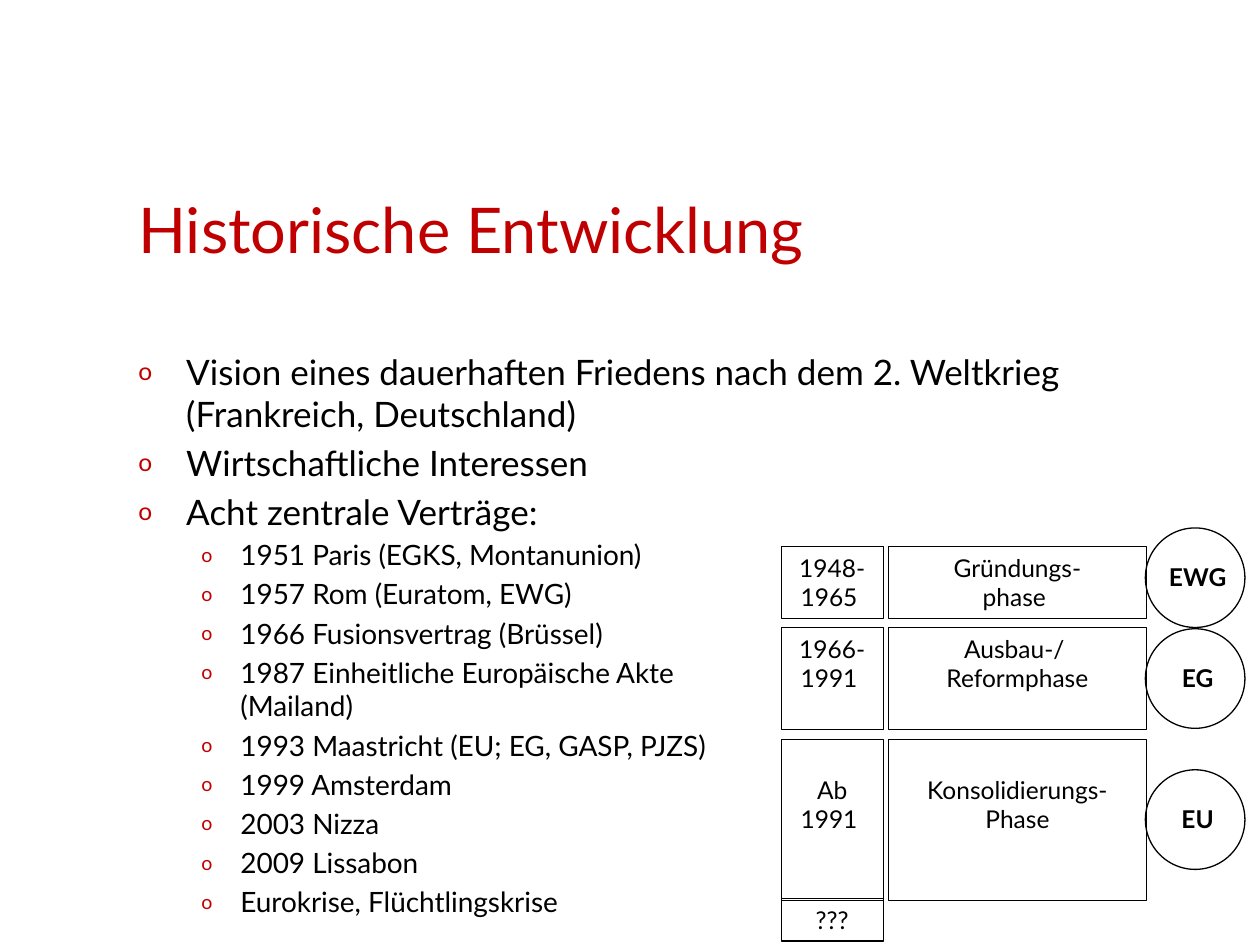
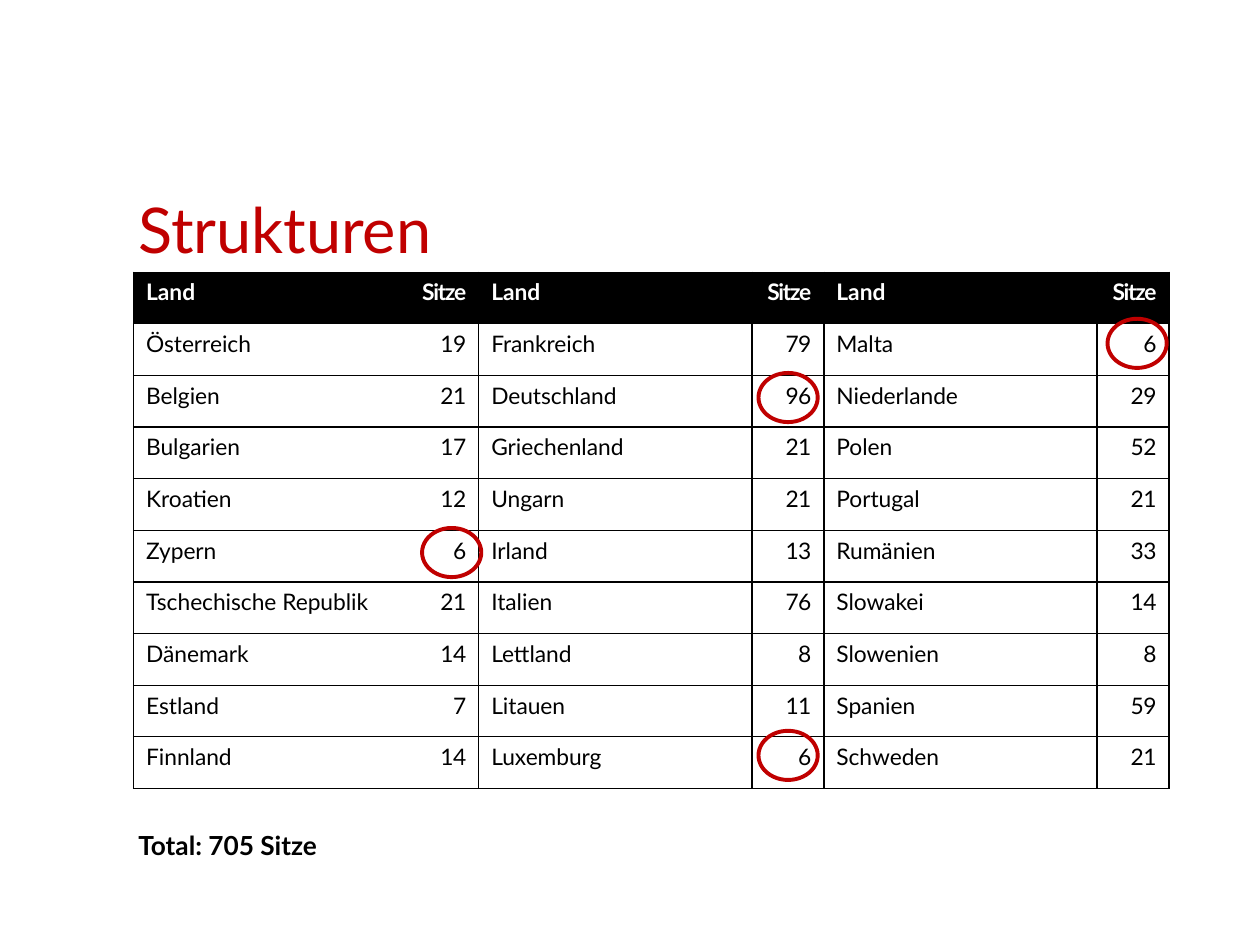
"""Build two slides on the history and the seats of the European Union."""
from lxml import etree
from pptx import Presentation
from pptx.dml.color import RGBColor
from pptx.enum.shapes import MSO_SHAPE
from pptx.enum.text import MSO_ANCHOR, PP_ALIGN
from pptx.oxml.ns import qn
from pptx.util import Inches, Pt

RED = RGBColor(0xC0, 0x00, 0x00)
BLACK = RGBColor(0x00, 0x00, 0x00)
WHITE = RGBColor(0xFF, 0xFF, 0xFF)
FONT = "Lato"
RECT, OVAL = MSO_SHAPE.RECTANGLE, MSO_SHAPE.OVAL
LEFT, MID, RIGHT, FULL = PP_ALIGN.LEFT, PP_ALIGN.CENTER, PP_ALIGN.RIGHT, PP_ALIGN.JUSTIFY
LOW, CENTRE = MSO_ANCHOR.BOTTOM, MSO_ANCHOR.MIDDLE


def write(frame, lines, size, color=BLACK, align=LEFT, bold=False):
    frame.word_wrap = True
    frame.text = "\n".join(lines)
    for para in frame.paragraphs:
        para.alignment = align
        para.font.name, para.font.size = FONT, Pt(size)
        para.font.bold, para.font.color.rgb = bold, color


def draw(slide, kind, at, color=BLACK, width=0.75):
    shape = slide.shapes.add_shape(kind, *map(Inches, at))
    shape.shadow.inherit = False
    shape.fill.background()
    shape.line.color.rgb, shape.line.width = color, Pt(width)
    shape.text_frame.vertical_anchor = MSO_ANCHOR.TOP
    return shape


prs = Presentation()
prs.slide_width, prs.slide_height = Inches(10), Inches(7.5)
slides = []
for title in ("Historische Entwicklung", "Strukturen"):
    slide = prs.slides.add_slide(prs.slide_layouts[6])
    frame = slide.shapes.add_textbox(*map(Inches, (1, 0.91, 8, 1.25))).text_frame
    frame.vertical_anchor = LOW
    write(frame, [title], 36, RED)
    slides.append(slide)
past, seats = slides

GOALS = [
    "Vision eines dauerhaften Friedens nach dem 2. Weltkrieg (Frankreich, Deutschland)",
    "Wirtschaftliche Interessen",
    "Acht zentrale Verträge:",
]
PACTS = [
    "1951 Paris (EGKS, Montanunion)",
    "1957 Rom (Euratom, EWG)",
    "1966 Fusionsvertrag (Brüssel)",
    "1987 Einheitliche Europäische Akte \v(Mailand)",
    "1993 Maastricht (EU; EG, GASP, PJZS)",
    "1999 Amsterdam",
    "2003 Nizza",
    "2009 Lissabon",
    "Eurokrise, Flüchtlingskrise",
]
frame = past.shapes.add_textbox(*map(Inches, (1, 2.73, 8, 4.01))).text_frame
write(frame, GOALS + PACTS, 20)
for i, para in enumerate(frame.paragraphs):
    sub = i >= len(GOALS)
    size = 16 if sub else 20
    props = para._p.get_or_add_pPr()
    props.set("marL", str(Inches(0.81 if sub else 0.38)))
    props.set("indent", str(-Inches(0.31 if sub else 0.38)))
    para.level = int(sub)
    para.font.size = Pt(size)
    para.space_before = Pt(0.2 * size if i else 0)
    tint = etree.Element(qn("a:buClr"))
    etree.SubElement(tint, qn("a:srgbClr"), val=str(RED))
    scale = etree.Element(qn("a:buSzPct"), val="70000")
    face = etree.Element(qn("a:buFont"), typeface=FONT)
    mark = etree.Element(qn("a:buChar"), char="o")
    spot = props.index(props.find(qn("a:spcBef"))) + 1
    for step, part in enumerate((tint, scale, face, mark)):
        props.insert(spot + step, part)

YEAR_X, PHASE_X, RING_X = 6.2, 7.05, 9.09
YEAR_W, PHASE_W, RING = 0.81, 2.05, 0.79
PHASES = [
    (4.34, 0.57, 0.05, ["1948-", "1965 "], ["Gründungs-", "phase "], "EWG", 4.19),
    (4.98, 0.81, 0.05, ["1966-", "1991 "], ["Ausbau-/ ", "Reformphase"], "EG", 4.99),
    (5.87, 1.28, 0.28, ["Ab 1991 "], ["Konsolidierungs-", "Phase"], "EU", 6.11),
]
for top, high, inset, years, phase, name, ring_y in PHASES:
    for x, wide, lines in ((PHASE_X, PHASE_W, phase), (YEAR_X, YEAR_W, years)):
        frame = draw(past, RECT, (x, top, wide, high)).text_frame
        frame.margin_top = Inches(inset)
        write(frame, lines, 14, align=MID)
    draw(past, OVAL, (RING_X, ring_y, RING, RING))
    label = past.shapes.add_textbox(*map(Inches, (RING_X + 0.04, ring_y + 0.22, 0.75, 0.34)))
    write(label.text_frame, [name], 14, align=MID, bold=True)
write(draw(past, RECT, (YEAR_X, 7.13, YEAR_W, 0.34)).text_frame, ["???"], 14, align=MID)

frame = seats.shapes.add_textbox(*map(Inches, (1, 6.43, 8.2, 0.79))).text_frame
frame.vertical_anchor, frame.margin_bottom = CENTRE, Inches(0.29)
write(frame, ["Total: 705 Sitze"], 15, align=FULL, bold=True)

ROWS = [
    ("Land", "Sitze") * 3,
    ("Österreich", 19, "Frankreich", 79, "Malta", 6),
    ("Belgien", 21, "Deutschland", 96, "Niederlande", 29),
    ("Bulgarien", 17, "Griechenland", 21, "Polen", 52),
    ("Kroatien", 12, "Ungarn", 21, "Portugal", 21),
    ("Zypern", 6, "Irland", 13, "Rumänien", 33),
    ("Tschechische Republik", 21, "Italien", 76, "Slowakei", 14),
    ("Dänemark", 14, "Lettland", 8, "Slowenien", 8),
    ("Estland", 7, "Litauen", 11, "Spanien", 59),
    ("Finnland", 14, "Luxemburg", 6, "Schweden", 21),
]
TOP, ROW_H = 2.16, 0.41
table = seats.shapes.add_table(
    len(ROWS), 6, Inches(1.06), Inches(TOP), Inches(8.2), Inches(ROW_H * len(ROWS))
).table
for c, col in enumerate(table.columns):
    col.width = Inches(0.57 if c % 2 else 2.17)
for r, row in enumerate(ROWS):
    table.rows[r].height = Inches(ROW_H)
    for c, value in enumerate(row):
        cell, head = table.cell(r, c), r == 0
        write(cell.text_frame, [str(value)], 13, WHITE if head else BLACK,
              RIGHT if c % 2 else LEFT, head)
        if c % 2:
            run = cell.text_frame.paragraphs[0].runs[0]
            run._r.get_or_add_rPr().set("spc", "-70" if head else "-30")
        if head:
            cell.fill.solid()
            cell.fill.fore_color.rgb = BLACK
        else:
            cell.fill.background()
        props = cell._tc.get_or_add_tcPr()
        edges = {"L": c, "R": c + 1, "T": 0, "B": 0}
        for i, (side, edge) in enumerate(edges.items()):
            width = 1 if 0 < edge < 6 else 0.75
            line = etree.Element(qn("a:ln" + side), w=str(Pt(width)))
            if edge == 1:
                etree.SubElement(line, qn("a:noFill"))
            else:
                fill = etree.SubElement(line, qn("a:solidFill"))
                etree.SubElement(fill, qn("a:srgbClr"), val=str(BLACK))
            props.insert(i, line)

for x, y in ((6.02, 2.96), (8.79, 2.53), (6.02, 5.8), (3.35, 4.19)):
    draw(seats, OVAL, (x, y, 0.47, 0.39), RED, 2.25)

prs.save("out.pptx")
